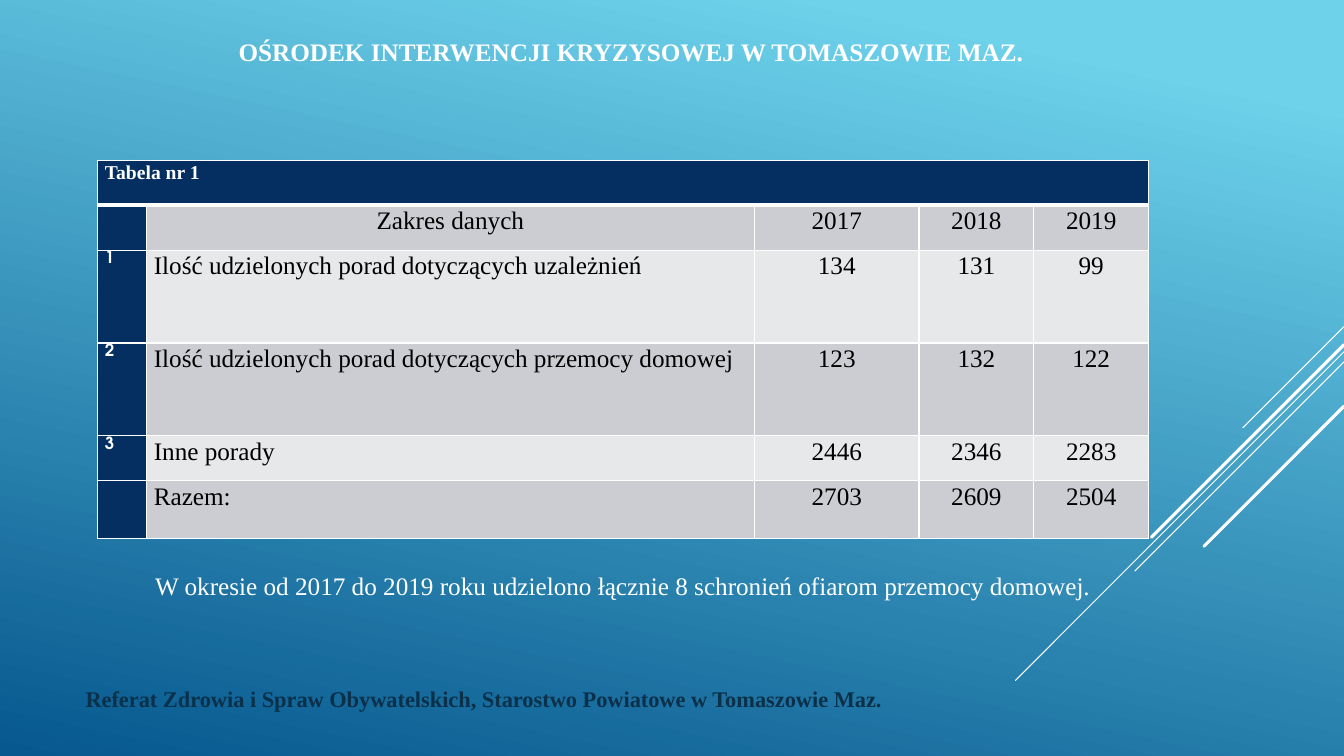
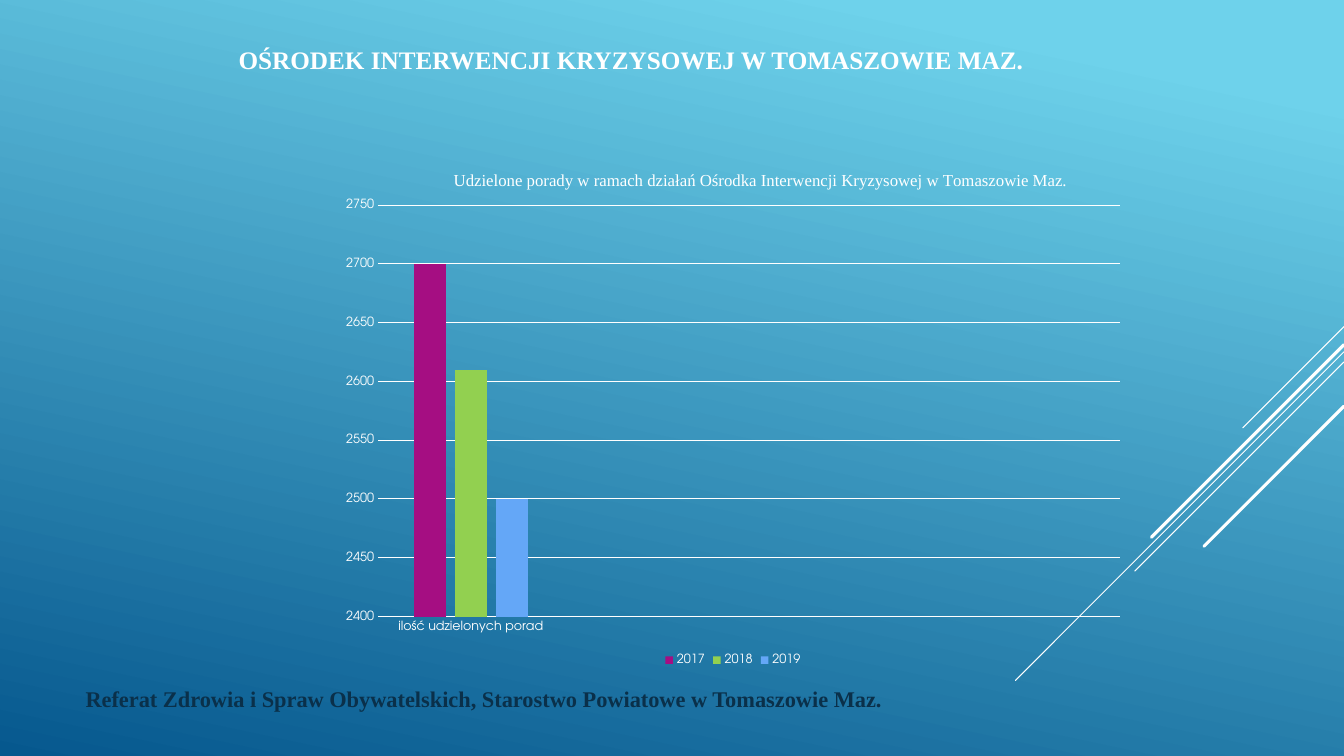
from dataclasses import dataclass

from pptx import Presentation
from pptx.chart.data import CategoryChartData
from pptx.dml.color import RGBColor
from pptx.enum.chart import XL_CHART_TYPE, XL_LEGEND_POSITION, XL_TICK_MARK
from pptx.enum.shapes import MSO_CONNECTOR
from pptx.enum.text import MSO_ANCHOR, MSO_AUTO_SIZE, PP_ALIGN
from pptx.oxml import parse_xml
from pptx.oxml.ns import nsdecls, qn
from pptx.util import Pt

LEFT, CENTER, JUSTIFY = PP_ALIGN.LEFT, PP_ALIGN.CENTER, PP_ALIGN.JUSTIFY
MIDDLE = MSO_ANCHOR.MIDDLE
GROW = MSO_AUTO_SIZE.SHAPE_TO_FIT_TEXT
COLUMNS = XL_CHART_TYPE.COLUMN_CLUSTERED
LEGEND_BOTTOM = XL_LEGEND_POSITION.BOTTOM
NO_TICKS = XL_TICK_MARK.NONE
STRAIGHT = MSO_CONNECTOR.STRAIGHT
TITLE_ONLY_LAYOUT = 5

WIDTH, HEIGHT = 960, 540
TITLE = "OŚRODEK INTERWENCJI KRYZYSOWEJ W TOMASZOWIE MAZ."
FOOTER = "Referat Zdrowia i Spraw Obywatelskich, Starostwo Powiatowe w Tomaszowie Maz."
# Diagonals from the right edge: start height, run, weight
DIAGONALS = [
    (233.3, 72.3, 0.75),
    (251.3, 234.7, 0.75),
    (258.5, 149.4, 0.75),
    (246.2, 137.5, 2.25),
    (290.2, 100, 2.25),
]
YEARS = ["2017", "2018", "2019"]
ROUNDED_TOTALS = [2700, 2610, 2500]
TABLE_ROWS = [
    ["Tabela nr 1", "", "", "", ""],
    ["", "Zakres danych", *YEARS],
    ["1", "Ilość udzielonych porad dotyczących uzależnień", "134", "131", "99"],
    ["2", "Ilość udzielonych porad dotyczących przemocy domowej", "123", "132", "122"],
    ["3", "Inne porady", "2446", "2346", "2283"],
    ["", "Razem:", "2703", "2609", "2504"],
]


@dataclass(frozen=True)
class Theme:
    white: str = "FFFFFF"
    black: str = "000000"
    sky: str = "6ED2EB"
    deep: str = "06588E"
    navy: str = "052F61"
    footer: str = "0A304A"
    bands: tuple = ("E7E8EA", "CCCDD2")
    series: tuple = ("A50E82", "92D050", "64A7F7")
    serif: str = "Times New Roman"
    sans: str = "TeX Gyre Adventor"
    large: int = 18
    medium: int = 16
    caption: int = 14
    small: int = 12
    chart: int = 10
    axis: int = 9


def rgb(value):
    return RGBColor.from_string(value)


def set_font(font, name, size, color, bold=False):
    font.name = name
    font.size = Pt(size)
    font.bold = bold
    font.color.rgb = rgb(color)


def write_text(frame, text, *, size, color, font, bold=False, align=LEFT,
               spacing=None, after=None):
    frame.word_wrap = True
    paragraph = frame.paragraphs[0]
    paragraph.alignment = align
    if spacing:
        paragraph.line_spacing = spacing
    if after:
        paragraph.space_after = Pt(after)
    run = paragraph.add_run()
    run.text = text
    set_font(run.font, font, size, color, bold)


def set_borders(cell, color, **weights):
    """Draw the cell's sides; weights maps L, R, T and B to points."""
    properties = cell._tc.get_or_add_tcPr()
    for index, side in enumerate("LRTB"):
        properties.insert(index, parse_xml(
            f'<a:ln{side} {nsdecls("a")} w="{Pt(weights.get(side, 1))}">'
            f'<a:solidFill><a:srgbClr val="{color}"/></a:solidFill></a:ln{side}>'))


def set_manual_layout(element, index, target="", **fractions):
    """Place a chart part by fractions of the chart's size."""
    previous = element.find(qn("c:layout"))
    if previous is not None:
        element.remove(previous)
    modes = "".join(f'<c:{key}Mode val="edge"/>' for key in "xy")
    places = "".join(f'<c:{key} val="{value}"/>' for key, value in fractions.items())
    element.insert(index, parse_xml(
        f'<c:layout {nsdecls("c")}><c:manualLayout>{target}{modes}{places}'
        f'</c:manualLayout></c:layout>'))


class Deck:
    def __init__(self, theme):
        self.theme = theme
        self.slide = None
        self.presentation = Presentation()
        self.presentation.slide_width = Pt(WIDTH)
        self.presentation.slide_height = Pt(HEIGHT)
        fill = self.presentation.slide_master.background.fill
        fill.gradient()
        fill.gradient_angle = 360 - 102
        stops = zip(fill.gradient_stops, (0.1, 1), (theme.sky, theme.deep))
        for stop, position, color in stops:
            stop.position = position
            stop.color.rgb = rgb(color)

    def add_slide(self, title_height, title_bottom_inset):
        layout = self.presentation.slide_layouts[TITLE_ONLY_LAYOUT]
        self.slide = self.presentation.slides.add_slide(layout)
        for top, run, weight in DIAGONALS:
            self.add_line((WIDTH, top), (WIDTH - run, top + run), weight)
        self.set_title(title_height, title_bottom_inset)
        self.add_text(FOOTER, (54, 486, 594, 29), size=self.theme.medium,
                      color=self.theme.footer, bold=True)

    def set_title(self, height, bottom_inset):
        title = self.slide.shapes.title
        title.left, title.top = Pt(90), Pt(20)
        title.width, title.height = Pt(721.5), Pt(height)
        frame = title.text_frame
        frame.vertical_anchor = MIDDLE
        frame.margin_bottom = Pt(bottom_inset)
        write_text(frame, TITLE, size=self.theme.large, color=self.theme.white,
                   font=self.theme.serif, bold=True, align=CENTER)

    def add_line(self, start, end, weight):
        line = self.slide.shapes.add_connector(
            STRAIGHT, *(Pt(value) for value in (*start, *end)))
        line.line.color.rgb = rgb(self.theme.white)
        line.line.width = Pt(weight)
        properties = line._element.spPr
        properties.find(qn("a:ln")).set("cap", "rnd")
        properties.append(parse_xml(f'<a:effectLst {nsdecls("a")}/>'))

    def add_text(self, text, box, grow=False, **text_format):
        shape = self.slide.shapes.add_textbox(*map(Pt, box))
        write_text(shape.text_frame, text, font=self.theme.serif, **text_format)
        if grow:
            shape.text_frame.auto_size = GROW

    def add_table(self, rows, left, top, widths, heights):
        """Table with a caption row, a number column and banded data."""
        table = self.slide.shapes.add_table(
            len(rows), len(widths), Pt(left), Pt(top),
            Pt(sum(widths)), Pt(sum(heights))).table
        for column, width in zip(table.columns, widths):
            column.width = Pt(width)
        for row, height in zip(table.rows, heights):
            row.height = Pt(height)
        table.cell(0, 0).merge(table.cell(0, len(widths) - 1))
        for row_index, values in enumerate(rows):
            for column_index, text in enumerate(values):
                self.format_cell(table.cell(row_index, column_index),
                                 text, row_index, column_index)

    def format_cell(self, cell, text, row, column):
        theme = self.theme
        heading = row == 0 or column == 0
        cell.margin_left = cell.margin_right = Pt(5.4)
        cell.margin_top = cell.margin_bottom = 0
        cell.fill.solid()
        cell.fill.fore_color.rgb = rgb(theme.navy if heading else theme.bands[row % 2])
        set_borders(cell, theme.white, T=3 if row == 1 else 1, B=3 if row == 0 else 1)
        if not text:
            return
        if row == 0:
            size, font, align = theme.caption, theme.serif, LEFT
        elif column == 0:
            size, font, align = theme.small, theme.sans, JUSTIFY
        else:
            size, font = theme.large, theme.serif
            align = CENTER if row == 1 or column > 1 else JUSTIFY
        write_text(cell.text_frame, text, size=size, font=font, align=align,
                   color=theme.white if heading else theme.black,
                   bold=heading, spacing=1.07)

    def add_column_chart(self, title, categories, series, box):
        theme = self.theme
        height = box[3]
        data = CategoryChartData()
        data.categories = categories
        for name, values in series:
            data.add_series(name, values)
        chart = self.slide.shapes.add_chart(COLUMNS, *map(Pt, box), data).chart
        set_font(chart.font, theme.sans, theme.chart, theme.white)

        chart.has_title = True
        write_text(chart.chart_title.text_frame, title, size=theme.small,
                   color=theme.white, font=theme.serif)
        set_manual_layout(chart.chart_title._element, 1, x=0.15, y=16 / height)

        chart.has_legend = True
        chart.legend.position = LEGEND_BOTTOM
        chart.legend.include_in_layout = False
        set_font(chart.legend.font, theme.sans, theme.axis, theme.white)

        plot = chart.plots[0]
        plot.gap_width, plot.overlap = 219, -27
        plot.vary_by_categories = False
        for bars, color in zip(plot.series, theme.series):
            bars.format.fill.solid()
            bars.format.fill.fore_color.rgb = rgb(color)
        set_manual_layout(chart._chartSpace.chart.plotArea, 0,
                          '<c:layoutTarget val="inner"/>',
                          x=0.06, y=43 / height, w=0.92, h=294 / height)

        value_axis, category_axis = chart.value_axis, chart.category_axis
        for axis in (value_axis, category_axis):
            axis.major_tick_mark = NO_TICKS
            set_font(axis.tick_labels.font, theme.sans, theme.axis, theme.white)
        value_axis.minimum_scale, value_axis.maximum_scale = 2400, 2750
        value_axis.major_unit = 50
        value_axis.format.line.fill.background()
        for line in (value_axis.major_gridlines.format.line, category_axis.format.line):
            line.color.rgb = rgb(theme.white)
            line.width = Pt(0.75)


def main():
    theme = Theme()
    deck = Deck(theme)

    deck.add_slide(title_height=76.5, title_bottom_inset=47)
    deck.add_table(TABLE_ROWS, 69.5, 114.5, widths=[35, 434.5, 117.5, 82, 82],
                   heights=[32.2, 32.2, 66.2, 66.2, 32.2, 41])
    deck.add_text(
        "W okresie od 2017 do 2019 roku udzielono łącznie 8 schronień "
        "ofiarom przemocy domowej.",
        (69.5, 402.5, 751, 31), grow=True, size=theme.large, color=theme.white,
        align=CENTER, spacing=1.07, after=8)

    deck.add_slide(title_height=65.5, title_bottom_inset=24.5)
    deck.add_column_chart(
        "Udzielone porady w ramach działań Ośrodka Interwencji Kryzysowej "
        "w Tomaszowie Maz.",
        ["ilość udzielonych porad", "", "", ""],
        [(year, [total, None, None, None])
         for year, total in zip(YEARS, ROUNDED_TOTALS)],
        (235.5, 103.5, 576, 375))

    deck.presentation.save("out.pptx")


if __name__ == "__main__":
    main()
